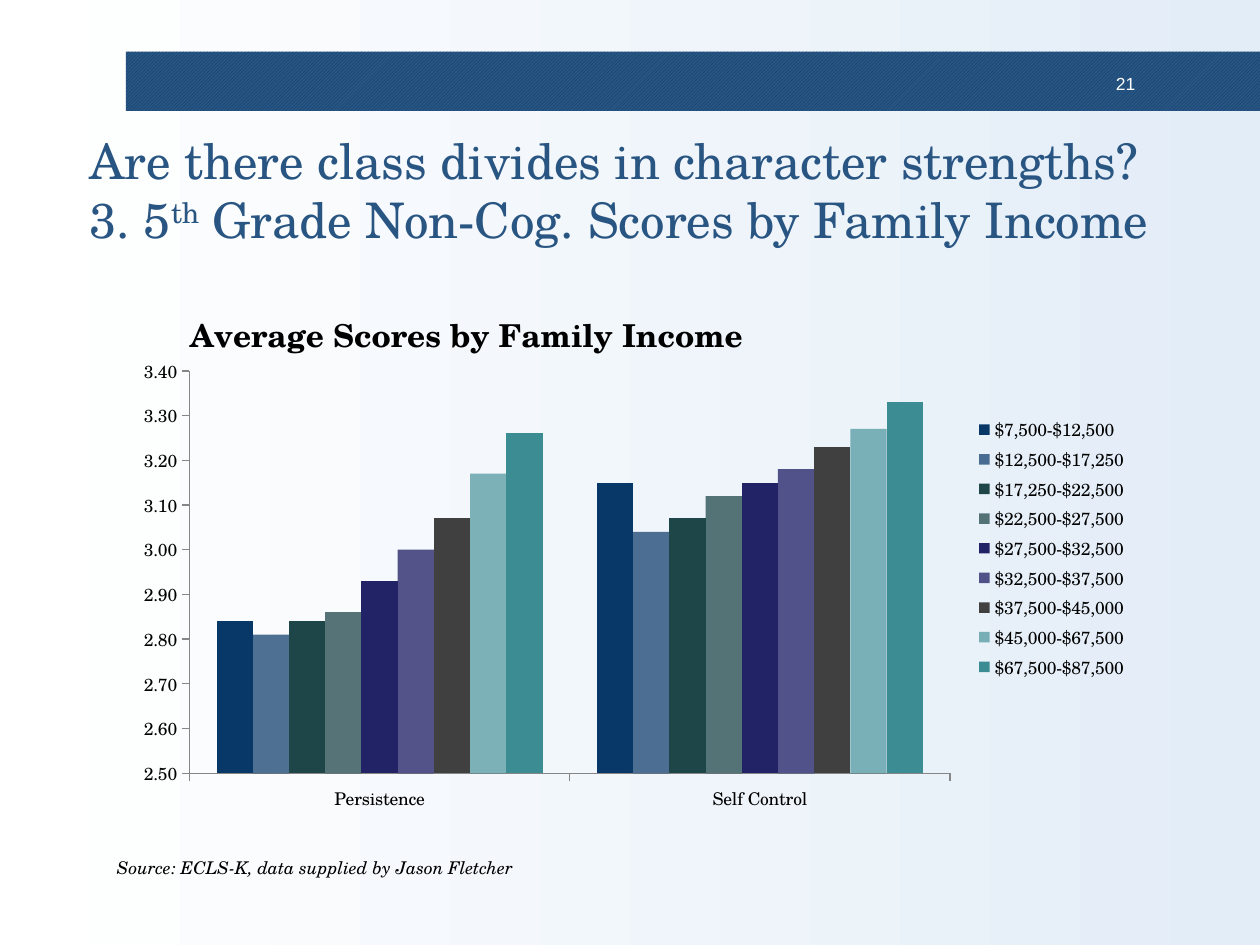
from lxml.etree import SubElement as Sub
from pptx import Presentation
from pptx.chart.data import CategoryChartData as Data
from pptx.dml.color import RGBColor as RGB
from pptx.enum.chart import XL_CHART_TYPE as Kind, XL_LEGEND_POSITION as Side, XL_TICK_MARK as Tick
from pptx.enum.dml import MSO_PATTERN as Pat
from pptx.enum.shapes import MSO_SHAPE as Shape
from pptx.enum.text import MSO_ANCHOR as Anchor, PP_ALIGN as Align
from pptx.oxml import parse_xml
from pptx.oxml.ns import nsdecls, qn
from pptx.util import Inches, Pt

SERIF, SANS = "TeX Gyre Schola", "Arial"
COLORS = {
    "white": "FFFFFF", "pale": "E3EDF7", "blue": "295582", "navy": "083868",
    "green": "1E4649", "violet": "222267", "gray": "404040", "teal": "3C8C93",
    "black": "000000", "line": "868686",
}
TITLE = ["Are there class divides in character strengths?\v3. 5", "th",
         " Grade Non-Cog. Scores by Family Income"]
SOURCE = "Source: ECLS-K, data supplied by Jason Fletcher"
HEAD = "Average Scores by Family Income"
CATS = ["Persistence", "Self Control"]
SERIES = [
    ("$7,500-$12,500", (2.84, 3.15), "navy", 100),
    ("$12,500-$17,250", (2.81, 3.04), "navy", 71),
    ("$17,250-$22,500", (2.84, 3.07), "green", 100),
    ("$22,500-$27,500", (2.86, 3.12), "green", 74),
    ("$27,500-$32,500", (2.93, 3.15), "violet", 100),
    ("$32,500-$37,500", (3.00, 3.18), "violet", 77),
    ("$37,500-$45,000", (3.07, 3.23), "gray", 100),
    ("$45,000-$67,500", (3.17, 3.27), "teal", 65),
    ("$67,500-$87,500", (3.26, 3.33), "teal", 100),
]
PLOT = {"x": 0.065, "y": 0.185, "w": 0.75, "h": 0.726}
LEGEND = {"x": 0.835, "y": 0.26, "w": 0.16, "h": 0.49}
CAPTION = {"x": 0.06, "y": 0.06}


def color(name):
    return RGB.from_string(COLORS[name])


def style(font, size, name, face=SERIF):
    font.size, font.name = Pt(size), face
    font.color.rgb = color(name)


def add_text(slide, spot, parts, size, name, face=SERIF, pad=(0.1, 0.05)):
    box = slide.shapes.add_textbox(*map(Inches, spot))
    frame = box.text_frame
    frame.word_wrap = True
    frame.margin_left = frame.margin_right = Inches(pad[0])
    frame.margin_top = frame.margin_bottom = Inches(pad[1])
    para = frame.paragraphs[0]
    para.text = parts[0]
    for part in parts[1:]:
        para.add_run().text = part
    for run in para.runs:
        style(run.font, size, name, face)
    return frame


def place(owner, spot, inner=False):
    target = '<c:layoutTarget val="inner"/>' if inner else ""
    modes = "".join(f'<c:{k}Mode val="edge"/>' for k in "xy")
    sizes = "".join(f'<c:{k} val="{v}"/>' for k, v in spot.items())
    layout = parse_xml(f'<c:layout {nsdecls("c")}><c:manualLayout>{target}{modes}{sizes}'
                       '</c:manualLayout></c:layout>')
    old = owner.find(qn("c:layout"))
    if old is not None:
        owner.remove(old)
    prior = [owner.find(qn(tag)) for tag in ("c:tx", "c:legendPos")]
    after = next((node for node in prior if node is not None), None)
    if after is None:
        owner.insert(0, layout)
    else:
        after.addnext(layout)


def add_chart(slide):
    data = Data(number_format="0.00")
    data.categories = CATS
    for label, vals, _, _ in SERIES:
        data.add_series(label, vals)
    spot = map(Inches, (0.98, 2.13, 8.05, 4.4))
    chart = slide.shapes.add_chart(Kind.COLUMN_CLUSTERED, *spot, data).chart
    style(chart.font, 10, "black")

    chart.has_title = True
    frame = chart.chart_title.text_frame
    frame.text = HEAD
    font = frame.paragraphs[0].runs[0].font
    style(font, 18, "black")
    font.bold = True
    chart.chart_title.include_in_layout = False

    chart.has_legend = True
    chart.legend.position = Side.RIGHT
    chart.legend.include_in_layout = False
    style(chart.legend.font, 10, "black")

    for axis in (chart.category_axis, chart.value_axis):
        axis.has_major_gridlines = False
        axis.major_tick_mark = Tick.OUTSIDE
        axis.minor_tick_mark = Tick.NONE
        axis.format.line.color.rgb = color("line")
        style(axis.tick_labels.font, 10, "black")
    scale = chart.value_axis
    scale.minimum_scale, scale.maximum_scale, scale.major_unit = 2.5, 3.4, 0.1
    scale.tick_labels.number_format = "0.00"
    scale.tick_labels.number_format_is_linked = False

    plot = chart.plots[0]
    plot.gap_width, plot.overlap, plot.vary_by_categories = 150, 0, False
    for bar, (_, _, name, alpha) in zip(plot.series, SERIES):
        fill = bar.format.fill
        fill.solid()
        fill.fore_color.rgb = color(name)
        bar.invert_if_negative = False
        if alpha < 100:
            tint = next(bar._element.iter(qn("a:srgbClr")))
            Sub(tint, qn("a:alpha")).set("val", str(alpha * 1000))

    place(chart.chart_title._element, CAPTION)
    place(chart.legend._element, LEGEND)
    place(next(chart._chartSpace.iter(qn("c:plotArea"))), PLOT, True)


def main():
    deck = Presentation()
    deck.slide_width, deck.slide_height = Inches(10), Inches(7.5)
    slide = deck.slides.add_slide(deck.slide_layouts[6])

    back = slide.background.fill
    back.gradient()
    back.gradient_angle = 0
    for stop, name, pos in zip(back.gradient_stops, ("white", "pale"), (0, 1)):
        stop.color.rgb, stop.position = color(name), pos

    band = slide.shapes.add_shape(Shape.RECTANGLE, *map(Inches, (1, 0.41, 9, 0.47)))
    band.shadow.inherit = False
    band.line.fill.background()
    band.fill.patterned()
    band.fill.pattern = Pat.LIGHT_UPWARD_DIAGONAL
    band.fill.fore_color.rgb = color("navy")
    band.fill.back_color.rgb = color("blue")

    page = add_text(slide, (8.67, 0.54, 0.41, 0.23), ["21"], 10, "white", SANS, (0.07, 0.04))
    page.paragraphs[0].alignment = Align.RIGHT

    title = add_text(slide, (0.67, 0.94, 8.75, 1.13), TITLE, 28, "blue", pad=(0.04, 0.04))
    title.vertical_anchor = Anchor.MIDDLE
    for run in title.paragraphs[0].runs:
        if run.text == "th":
            run.font._element.set("baseline", "30000")

    add_chart(slide)
    source = add_text(slide, (0.83, 6.75, 8, 0.77), [SOURCE], 10, "black")
    source.paragraphs[0].runs[0].font.italic = True
    deck.save("out.pptx")


if __name__ == "__main__":
    main()
